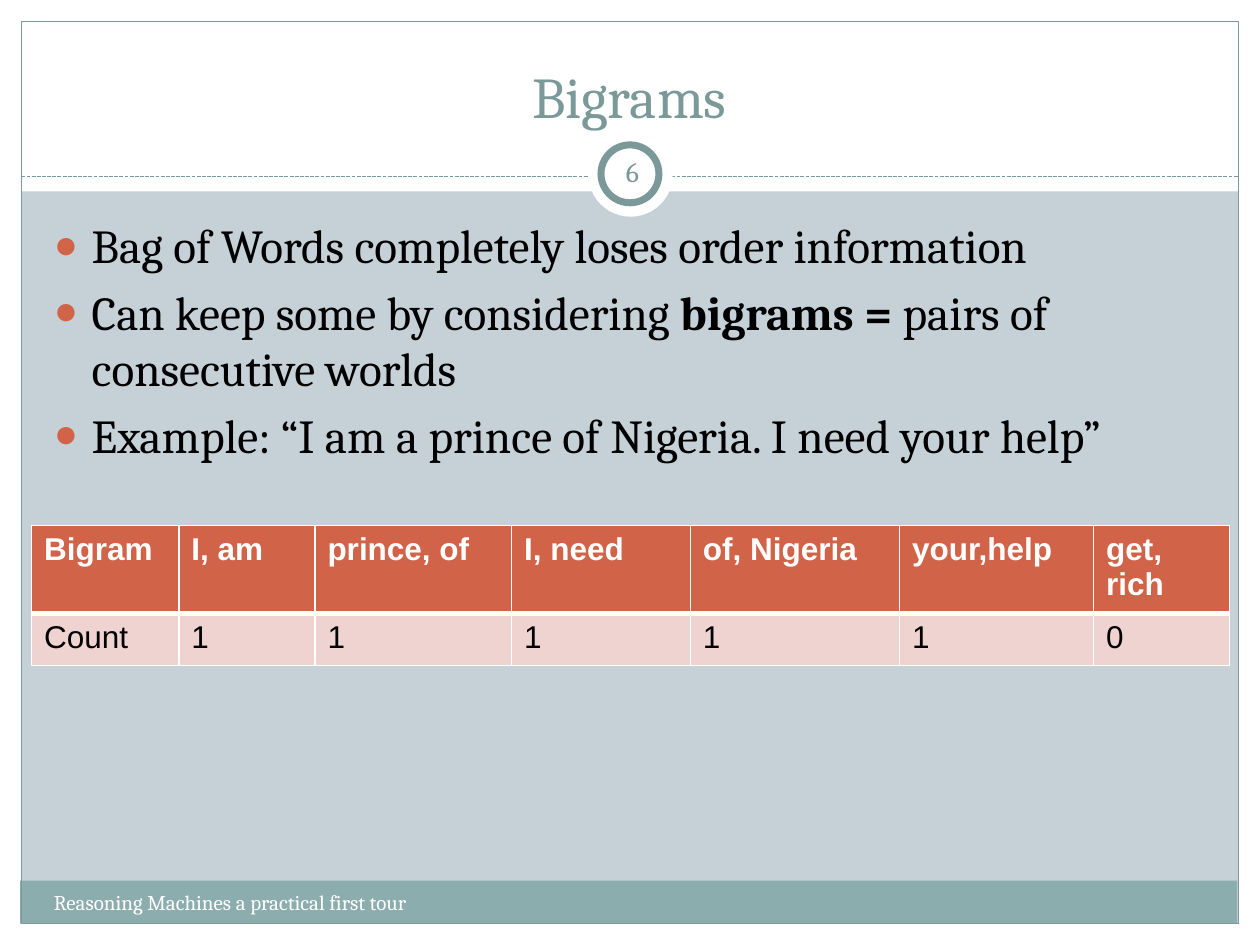
from dataclasses import dataclass

from lxml.etree import SubElement
from pptx import Presentation
from pptx.dml.color import RGBColor
from pptx.enum.dml import MSO_LINE
from pptx.enum.shapes import MSO_CONNECTOR, MSO_SHAPE
from pptx.enum.text import MSO_ANCHOR as ANCHOR, PP_ALIGN as ALIGN
from pptx.oxml.ns import qn
from pptx.util import Inches, Pt


@dataclass(frozen=True)
class Theme:
    white: str = "FFFFFF"
    black: str = "000000"
    background: str = "C5D1D7"
    frame: str = "7C999A"
    number: str = "7B9899"
    footer: str = "8CADAE"
    accent: str = "D16349"
    row: str = "EED3D0"
    serif: str = "Cambria"
    sans: str = "Arial"
    title_size: int = 33
    body_size: int = 27
    table_size: int = 18
    number_size: int = 16
    footer_size: int = 12


T = Theme()
rgb = RGBColor.from_string


def add_text(p, text, size, color, font=T.serif, bold=False, align=None):
    r = p.add_run()
    r.text = text
    r.font.size, r.font.name, r.font.bold = Pt(size), font, bold
    r.font.color.rgb = rgb(color)
    if align is not None:
        p.alignment = align


def add_box(left, top, width, height, anchor=ANCHOR.TOP):
    box = s.shapes.add_textbox(Inches(left), Inches(top), Inches(width), Inches(height))
    tf = box.text_frame
    tf.word_wrap = True
    tf.vertical_anchor = anchor
    return tf


prs = Presentation()
prs.slide_width, prs.slide_height = Inches(10), Inches(7.5)
s = prs.slides.add_slide(prs.slide_layouts[6])
s.background.fill.solid()
s.background.fill.fore_color.rgb = rgb(T.background)

# Margins, footer band, frame, divider and number badge
RECT, OVAL = MSO_SHAPE.RECTANGLE, MSO_SHAPE.OVAL
decor = [
    (RECT, 0, 7.33, 10, 0.17, T.white, None),
    (RECT, 0, 0, 10, 1.52, T.white, None),
    (RECT, 0, 0, 0.17, 7.5, T.white, None),
    (RECT, 9.83, 0, 0.17, 7.5, T.white, None),
    (RECT, 0.16, 6.99, 9.66, 0.34, T.footer, None),
    (RECT, 0.17, 0.17, 9.66, 7.16, None, 0.75),
    (OVAL, 4.67, 1.05, 0.67, 0.67, T.white, None),
    (OVAL, 4.77, 1.15, 0.46, 0.46, T.white, 4),
]
for kind, left, top, width, height, fill, line in decor:
    if kind == OVAL and line is None:  # the divider runs behind the badge
        divider = s.shapes.add_connector(MSO_CONNECTOR.STRAIGHT, Inches(0.17), Inches(1.4),
                                         Inches(9.83), Inches(1.4))
        divider.line.color.rgb = rgb(T.frame)
        divider.line.width = Pt(0.75)
        divider.line.dash_style = MSO_LINE.SQUARE_DOT
        SubElement(divider._element.spPr, qn("a:effectLst"))
    sp = s.shapes.add_shape(kind, Inches(left), Inches(top), Inches(width), Inches(height))
    sp.shadow.inherit = False
    if fill:
        sp.fill.solid()
        sp.fill.fore_color.rgb = rgb(fill)
    else:
        sp.fill.background()
    if line:
        sp.line.color.rgb = rgb(T.frame)
        sp.line.width = Pt(line)
    else:
        sp.line.fill.background()

# Title
tf = add_box(0.33, 0.25, 9.33, 0.83, ANCHOR.BOTTOM)
add_text(tf.paragraphs[0], "Bigrams", T.title_size, T.frame, align=ALIGN.CENTER)

# Bullets: each is a list of (text, bold) runs
bullets = [
    [("Bag of Words completely loses order information", False)],
    [("Can keep some by considering ", False), ("bigrams =", True),
     (" pairs of consecutive worlds", False)],
    [("Example: “I am a prince of Nigeria. I need your help”", False)],
]
tf = add_box(0.33, 1.67, 9.3, 2.33)
for i, runs in enumerate(bullets):
    p = tf.paragraphs[0] if i == 0 else tf.add_paragraph()
    p.space_before = Pt(0.2 * T.body_size)
    pPr = p._p.get_or_add_pPr()
    pPr.set("marL", str(Inches(0.3)))
    pPr.set("indent", str(-Inches(0.3)))
    SubElement(SubElement(pPr, qn("a:buClr")), qn("a:srgbClr"), val=T.accent)
    SubElement(pPr, qn("a:buSzPct"), val="85000")
    SubElement(pPr, qn("a:buFont"), typeface=T.sans)
    SubElement(pPr, qn("a:buChar"), char="●")
    for text, bold in runs:
        add_text(p, text, T.body_size, T.black, bold=bold)

# Footer and slide number
tf = add_box(0.33, 7.01, 3.92, 0.4)
add_text(tf.paragraphs[0], "Reasoning Machines a practical first tour", T.footer_size, T.white)
tf = add_box(4.77, 1.12, 0.5, 0.48, ANCHOR.MIDDLE)
tf.margin_left = tf.margin_right = tf.margin_top = tf.margin_bottom = Inches(0.05)
add_text(tf.paragraphs[0], "6", T.number_size, T.number, align=ALIGN.CENTER)

# Bigram counts
counts = [
    ["Bigram", "I, am", "prince, of", "I, need", "of, Nigeria", "your,help", "get, rich"],
    ["Count", "1", "1", "1", "1", "1", "0"],
]
col_widths = [1.17, 1.08, 1.56, 1.42, 1.66, 1.54, 1.08]
row_height = 0.41
table = s.shapes.add_table(len(counts), len(col_widths), Inches(0.25), Inches(4.17),
                           Inches(9.5), Inches(row_height * len(counts))).table
for col, width in zip(table.columns, col_widths):
    col.width = Inches(width)
for i, values in enumerate(counts):
    header = i == 0
    table.rows[i].height = Inches(row_height)
    for j, value in enumerate(values):
        cell = table.cell(i, j)
        add_text(cell.text_frame.paragraphs[0], value, T.table_size,
                 T.white if header else T.black, font=T.sans, bold=header)
        tcPr = cell._tc.get_or_add_tcPr()
        for side in ("lnL", "lnR", "lnT", "lnB"):
            # A heavier rule separates the header from the counts
            heavy = side == ("lnB" if header else "lnT")
            ln = SubElement(tcPr, qn(f"a:{side}"), w=str(Pt(3 if heavy else 1)))
            SubElement(SubElement(ln, qn("a:solidFill")), qn("a:srgbClr"), val=T.white)
        cell.fill.solid()
        cell.fill.fore_color.rgb = rgb(T.accent if header else T.row)

prs.save("out.pptx")
